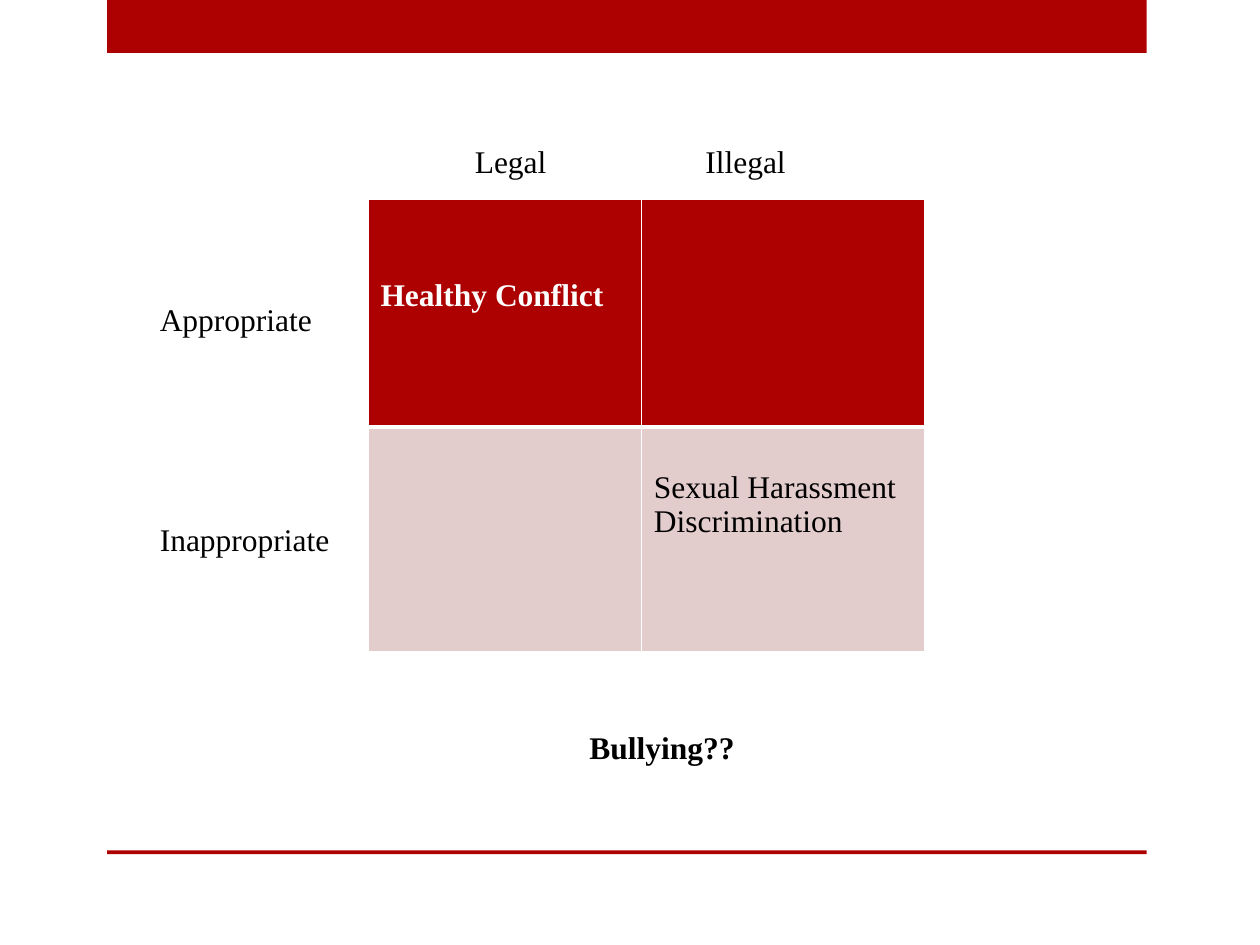
from lxml.etree import SubElement
from pptx import Presentation
from pptx.dml.color import RGBColor
from pptx.enum.shapes import MSO_SHAPE
from pptx.oxml.ns import qn
from pptx.util import Inches, Pt

RED = RGBColor(0xAD, 0x01, 0x01)
PINK = RGBColor(0xE3, 0xCC, 0xCC)
WHITE = RGBColor(0xFF, 0xFF, 0xFF)
BLACK = RGBColor(0x00, 0x00, 0x00)
FONT = "Times New Roman"

BARS = [(0, 0.42), (6.75, 0.03)]
COLUMN_WIDTHS = [2.17, 2.25]
ROWS = [
    {"height": 1.81, "fill": RED, "color": WHITE, "bold": True, "margin": 0.63,
     "cells": [["Healthy Conflict"], []], "borders": {"L": 1, "R": 1, "T": 1, "B": 3}},
    {"height": 1.78, "fill": PINK, "color": BLACK, "bold": False, "margin": 0.34,
     "cells": [[], ["Sexual Harassment", "Discrimination"]],
     "borders": {"L": 1, "R": 1, "T": 3, "B": 1}},
]
LABELS = [
    ("Appropriate", 1.17, 2.33, 1.5, False),
    ("Legal", 3.67, 1.08, 0.92, False),
    ("Illegal", 5.5, 1.08, 0.92, False),
    ("Inappropriate", 1.17, 4.08, 1.58, False),
    ("Bullying??", 4.58, 5.73, 1.38, True),
]


def write_lines(text_frame, lines, color, bold):
    text_frame.text = "\n".join(lines)
    for paragraph in text_frame.paragraphs:
        font = paragraph.font
        font.name, font.size, font.bold = FONT, Pt(18), bold
        font.color.rgb = color


def set_borders(cell, widths):
    properties = cell._tc.get_or_add_tcPr()
    for side, width in widths.items():
        line = SubElement(properties, qn(f"a:ln{side}"), w=str(Pt(width)))
        fill = SubElement(line, qn("a:solidFill"))
        SubElement(fill, qn("a:srgbClr"), val=str(WHITE))


def add_bar(slide, top, height):
    bar = slide.shapes.add_shape(
        MSO_SHAPE.RECTANGLE, Inches(0.85), Inches(top), Inches(8.25), Inches(height))
    bar.shadow.inherit = False
    bar.fill.solid()
    bar.fill.fore_color.rgb = RED
    bar.line.fill.background()


def add_matrix(slide):
    table = slide.shapes.add_table(
        len(ROWS), len(COLUMN_WIDTHS), Inches(2.92), Inches(1.58),
        Inches(sum(COLUMN_WIDTHS)), Inches(sum(row["height"] for row in ROWS))).table
    table.first_row = table.horz_banding = False
    for column, width in zip(table.columns, COLUMN_WIDTHS):
        column.width = Inches(width)
    for table_row, row in zip(table.rows, ROWS):
        table_row.height = Inches(row["height"])
        for cell, lines in zip(table_row.cells, row["cells"]):
            set_borders(cell, row["borders"])
            cell.fill.solid()
            cell.fill.fore_color.rgb = row["fill"]
            cell.margin_top = Inches(row["margin"])
            write_lines(cell.text_frame, lines, row["color"], row["bold"])


def add_label(slide, text, left, top, width, bold):
    box = slide.shapes.add_textbox(Inches(left), Inches(top), Inches(width), Inches(0.4))
    box.text_frame.word_wrap = True
    write_lines(box.text_frame, [text], BLACK, bold)


def main():
    presentation = Presentation()
    presentation.slide_width = Inches(10)
    presentation.slide_height = Inches(7.5)
    slide = presentation.slides.add_slide(presentation.slide_layouts[6])
    for bar in BARS:
        add_bar(slide, *bar)
    add_matrix(slide)
    for label in LABELS:
        add_label(slide, *label)
    presentation.save("out.pptx")


if __name__ == "__main__":
    main()
